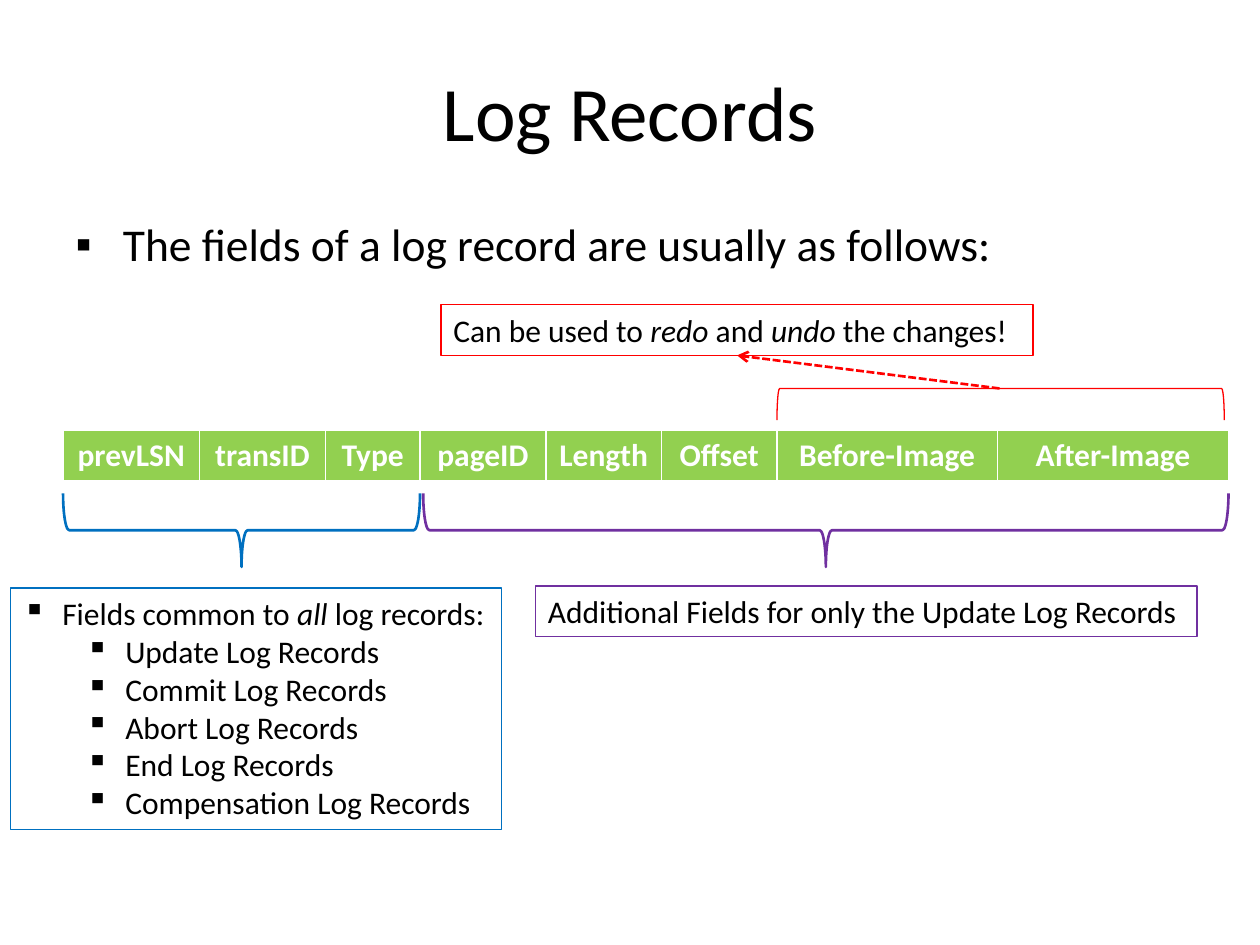
"""Build the Log Records slide on a grid of 120 columns by 90 rows."""
from dataclasses import dataclass
from itertools import accumulate

from lxml import etree
from pptx import Presentation
from pptx import util as u
from pptx.dml.color import RGBColor
from pptx.enum import dml, shapes, text
from pptx.oxml.ns import qn

WIDTH, HEIGHT = u.Inches(10), u.Inches(7.5)
FONT = "Calibri"
BLACK, WHITE, GREEN = "000000", "FFFFFF", "92D050"
BLUE, PURPLE, RED = "0070C0", "7030A0", "FF0000"
FIELDS = {"prevLSN": 13, "transID": 12, "Type": 9, "pageID": 12,
          "Length": 11, "Offset": 11, "Before-Image": 21, "After-Image": 22}
EDGES = list(accumulate(FIELDS.values(), initial=6))
TABLE_TOP, TABLE_HEIGHT = 41, 4.9
BORDERS = {"lnL": 1, "lnR": 1, "lnT": 1, "lnB": 3}


@dataclass
class Para:
    """Paragraph whose every second run is italic; hang is the bullet's indent."""
    runs: list[str]
    hang: float = 0
    margin: float = 0
    level: int = 0


@dataclass
class Note:
    """Outlined text box in grid units."""
    left: float
    top: float
    width: float
    height: float
    color: str
    paras: list[Para]


@dataclass
class Span:
    """Brace or bracket over a range of table columns."""
    first: int
    last: int
    top: float
    height: float
    color: str
    weight: float
    kind: shapes.MSO_SHAPE
    turn: int
    trim_left: float = 0
    trim_right: float = 0


RECORDS = ["Update", "Commit", "Abort", "End", "Compensation"]
COMMON = Note(1, 56, 46.8, 23, BLUE, [
    Para(["Fields common to ", "all", " log records:"], 3.75, 3.75),
    *(Para([f"{name} Log Records"], 3.75, 9.75, 1) for name in RECORDS)])
EXTRA = Note(51, 55.8, 63, 4.85, PURPLE,
             [Para(["Additional Fields for only the Update Log Records"])])
USAGE = Note(42, 29, 56.4, 4.85, RED,
             [Para(["Can be used to ", "redo", " and ", "undo", " the changes!"])])
SPANS = [
    Span(0, 3, 47, 7, BLUE, 1.5, shapes.MSO_SHAPE.RIGHT_BRACE, 90),
    Span(3, 8, 47, 7, PURPLE, 1.5, shapes.MSO_SHAPE.RIGHT_BRACE, 90, trim_left=0.3),
    Span(6, 8, 37, 3, RED, 0.75, shapes.MSO_SHAPE.RIGHT_BRACKET, 270, trim_right=0.4),
]


def grid(n: float) -> int:
    """Turn grid units into a length."""
    return round(n * WIDTH / 120)


def rgb(value: str) -> RGBColor:
    """Turn a hex string into a colour."""
    return RGBColor.from_string(value)


def style_line(line, color: str, weight: float) -> None:
    """Set the colour and weight of a line."""
    line.color.rgb = rgb(color)
    line.width = u.Pt(weight)


def add_run(p, content: str, size: float, color: str = BLACK,
            bold: bool = False, italic: bool = False) -> None:
    """Add one formatted run."""
    r = p.add_run()
    r.text = content
    r.font.name, r.font.size = FONT, u.Pt(size)
    r.font.bold, r.font.italic = bold, italic
    r.font.color.rgb = rgb(color)


def write(tf, paras: list[Para], size: float) -> None:
    """Fill a text frame with paragraphs."""
    for i, para in enumerate(paras):
        p = tf.add_paragraph() if i else tf.paragraphs[0]
        p.level = para.level
        for j, content in enumerate(para.runs):
            add_run(p, content, size, italic=j % 2 == 1)
        if para.hang:
            pPr = p._p.get_or_add_pPr()
            pPr.set("marL", str(grid(para.margin)))
            pPr.set("indent", str(-grid(para.hang)))
            etree.SubElement(pPr, qn("a:buChar"), char="▪")


def move(sp, left: float, top: float, width: float, height: float) -> None:
    """Place a shape on the grid."""
    sp.left, sp.top = grid(left), grid(top)
    sp.width, sp.height = grid(width), grid(height)


def add_note(s, note: Note):
    """Draw an outlined text box."""
    box = [grid(n) for n in (note.left, note.top, note.width, note.height)]
    sp = s.shapes.add_textbox(*box)
    style_line(sp.line, note.color, 0.75)
    tf = sp.text_frame
    tf.word_wrap = False
    tf.auto_size = text.MSO_AUTO_SIZE.SHAPE_TO_FIT_TEXT
    write(tf, note.paras, 18)
    return sp


def add_span(s, span: Span) -> None:
    """Draw a turned brace or bracket along its columns."""
    left = EDGES[span.first] + span.trim_left
    width = EDGES[span.last] - span.trim_right - left
    shift = (width - span.height) / 2
    sp = s.shapes.add_shape(span.kind, grid(left + shift), grid(span.top - shift),
                            grid(span.height), grid(width))
    sp.rotation = span.turn
    sp.shadow.inherit = False
    sp.fill.background()
    style_line(sp.line, span.color, span.weight)


def add_fields(s) -> None:
    """Draw the one-row table of log record fields."""
    frame = s.shapes.add_table(1, len(FIELDS), grid(EDGES[0]), grid(TABLE_TOP),
                               grid(EDGES[-1] - EDGES[0]), grid(TABLE_HEIGHT))
    table = frame.table
    for i, (name, width) in enumerate(FIELDS.items()):
        table.columns[i].width = grid(width)
        cell = table.cell(0, i)
        tcPr = cell._tc.get_or_add_tcPr()
        for tag, weight in BORDERS.items():
            ln = etree.SubElement(tcPr, qn(f"a:{tag}"), w=str(u.Pt(weight)))
            fill = etree.SubElement(ln, qn("a:solidFill"))
            etree.SubElement(fill, qn("a:srgbClr"), val=WHITE)
        cell.fill.solid()
        cell.fill.fore_color.rgb = rgb(GREEN)
        p = cell.text_frame.paragraphs[0]
        p.alignment = text.PP_ALIGN.CENTER
        add_run(p, name, 18, WHITE, bold=True)


def add_arrow(s, target) -> None:
    """Draw the dashed arrow from the bracket to the bottom of a note."""
    start = grid(95.2), grid(37)
    cx = s.shapes.add_connector(shapes.MSO_CONNECTOR.STRAIGHT, *start, *start)
    cx.end_connect(target, 2)
    style_line(cx.line, RED, 1.5)
    cx.line.dash_style = dml.MSO_LINE.SQUARE_DOT
    etree.SubElement(cx.line._get_or_add_ln(), qn("a:tailEnd"), type="arrow")
    etree.SubElement(cx._element.spPr, qn("a:effectLst"))


def main() -> None:
    """Build and save the slide."""
    prs = Presentation()
    prs.slide_width, prs.slide_height = WIDTH, HEIGHT
    s = prs.slides.add_slide(prs.slide_layouts[1])
    title, body = s.placeholders
    move(title, 6, 3, 108, 15)
    title.text_frame.vertical_anchor = text.MSO_ANCHOR.MIDDLE
    title.text_frame.paragraphs[0].alignment = text.PP_ALIGN.CENTER
    write(title.text_frame, [Para(["Log Records"])], 44)
    move(body, 6, 20, 112, 69)
    write(body.text_frame,
          [Para(["The fields of a log record are usually as follows:"], 4.5, 4.5)], 26)
    add_fields(s)
    for span in SPANS:
        add_span(s, span)
    for note in (COMMON, EXTRA):
        add_note(s, note)
    add_arrow(s, add_note(s, USAGE))
    prs.save("out.pptx")


if __name__ == "__main__":
    main()
